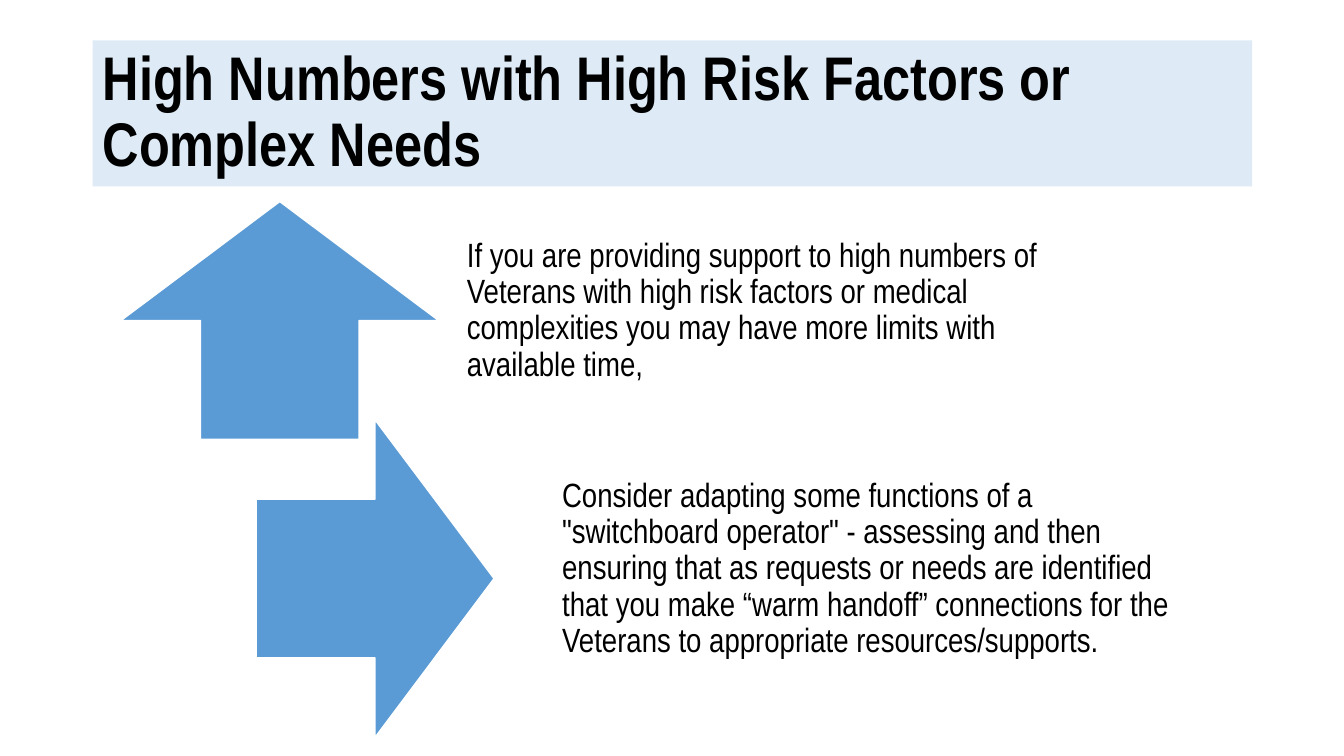
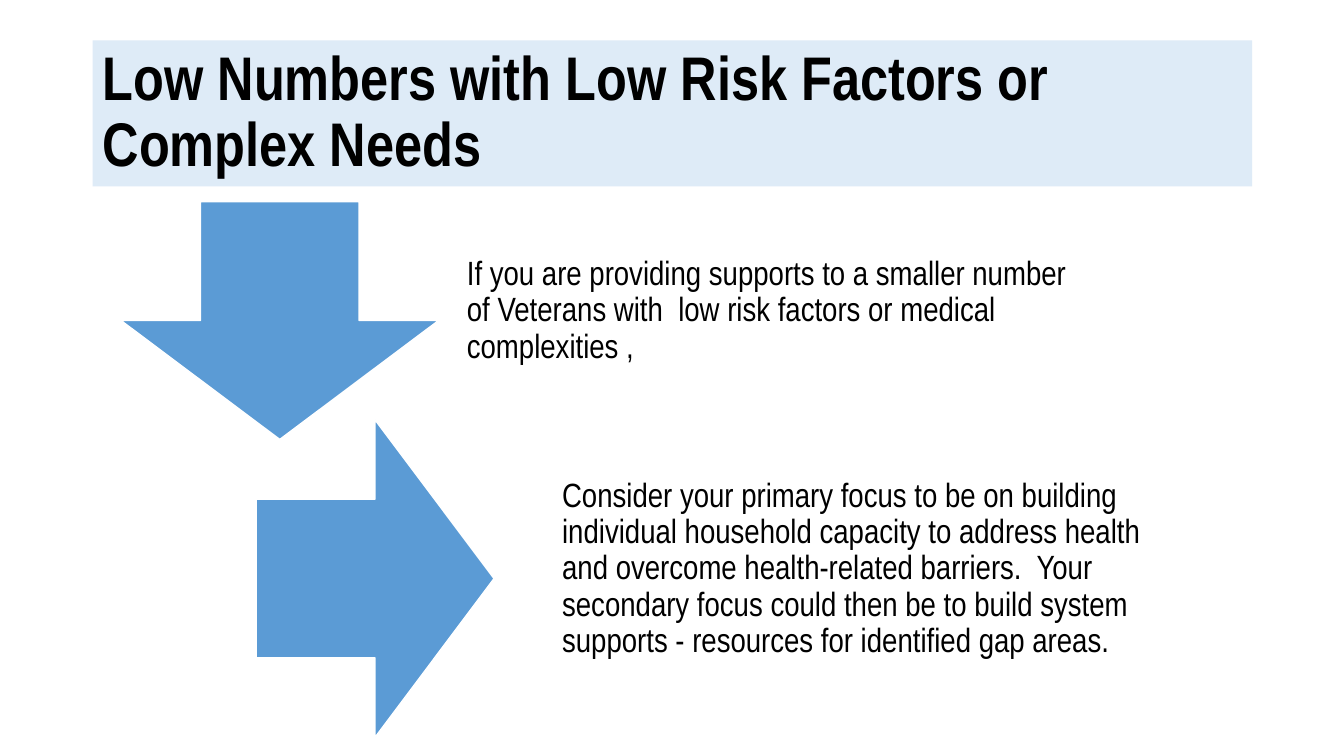
import pptx
import pptx.util
import pptx.dml.color
import pptx.enum.shapes
import pptx.enum.text

ARROW = pptx.enum.shapes.MSO_SHAPE
INCHES = pptx.util.Inches

COLORS = {"band": "DEEBF7", "arrow": "5B9BD5", "outline": "FFFFFF", "text": "000000"}
FONT = "Arial Narrow"
SLIDE_WIDTH, SLIDE_HEIGHT = 13.33, 7.5

TITLE_BOX = (0.92, 0.4, 11.5, 1.45)
STEP_LEFT, STEP_TOP = 1.2, 2
STEP_SHIFT, STEP_PITCH = 0.945, 2.56
ARROW_SPAN, STEP_HEIGHT = 3.15, 2.36
TEXT_OFFSET, TEXT_WIDTH = 3.24, 6.55
STEP_INSETS = (0.19, 0, 0.19, 0.19)

SLIDES = [
    (
        "High Numbers with High Risk Factors or Complex Needs",
        [
            (ARROW.UP_ARROW,
             "If you are providing support to high numbers of  Veterans with high risk "
             "factors or medical complexities you may have more limits with available time,"),
            (ARROW.RIGHT_ARROW,
             'Consider adapting some functions of a "switchboard operator" - assessing and '
             "then ensuring that as requests or needs are identified that you make “warm "
             "handoff” connections for the Veterans to appropriate resources/supports."),
        ],
    ),
    (
        "Low Numbers with Low Risk Factors or Complex Needs",
        [
            (ARROW.DOWN_ARROW,
             "If you are providing supports to a smaller number of Veterans with  low risk "
             "factors or medical complexities ,"),
            (ARROW.RIGHT_ARROW,
             "Consider your primary focus to be on building individual household capacity "
             "to address health and overcome health-related barriers.  Your secondary focus "
             "could then be to build system supports - resources for identified gap areas."),
        ],
    ),
]


def rgb(name):
    return pptx.dml.color.RGBColor.from_string(COLORS[name])


def add_text(slide, text, box, size=24, bold=False, fill=None, insets=(0.1, 0.05, 0.1, 0.05)):
    """Add a wrapped, vertically centred text box; insets run left, top, right, bottom."""
    shape = slide.shapes.add_textbox(*map(INCHES, box))
    if fill:
        shape.fill.solid()
        shape.fill.fore_color.rgb = rgb(fill)
    frame = shape.text_frame
    frame.word_wrap = True
    frame.vertical_anchor = pptx.enum.text.MSO_ANCHOR.MIDDLE
    frame.margin_left, frame.margin_top, frame.margin_right, frame.margin_bottom = map(INCHES, insets)
    paragraph = frame.paragraphs[0]
    paragraph.line_spacing = 0.9
    run = paragraph.add_run()
    run.text = text
    run.font.name = FONT
    run.font.size = pptx.util.Pt(size)
    run.font.bold = bold
    run.font.color.rgb = rgb("text")


def add_arrow(slide, kind, center_x, center_y):
    width, height = ARROW_SPAN, STEP_HEIGHT
    if kind == ARROW.RIGHT_ARROW:
        width, height = height, width
    box = (center_x - width / 2, center_y - height / 2, width, height)
    shape = slide.shapes.add_shape(kind, *map(INCHES, box))
    shape.shadow.inherit = False
    shape.fill.solid()
    shape.fill.fore_color.rgb = rgb("arrow")
    shape.line.color.rgb = rgb("outline")
    shape.line.width = pptx.util.Pt(1)


def add_step(slide, index, kind, text):
    """Add one arrow with its text, each step lower and further right."""
    left = STEP_LEFT + index * STEP_SHIFT
    top = STEP_TOP + index * STEP_PITCH
    add_arrow(slide, kind, left + ARROW_SPAN / 2, top + STEP_HEIGHT / 2)
    add_text(slide, text, (left + TEXT_OFFSET, top, TEXT_WIDTH, STEP_HEIGHT), insets=STEP_INSETS)


def main():
    presentation = pptx.Presentation()
    presentation.slide_width = INCHES(SLIDE_WIDTH)
    presentation.slide_height = INCHES(SLIDE_HEIGHT)
    blank_layout = presentation.slide_layouts[6]
    for title, steps in SLIDES:
        slide = presentation.slides.add_slide(blank_layout)
        add_text(slide, title, TITLE_BOX, size=44, bold=True, fill="band")
        for index, (kind, text) in enumerate(steps):
            add_step(slide, index, kind, text)
    presentation.save("out.pptx")


if __name__ == "__main__":
    main()
